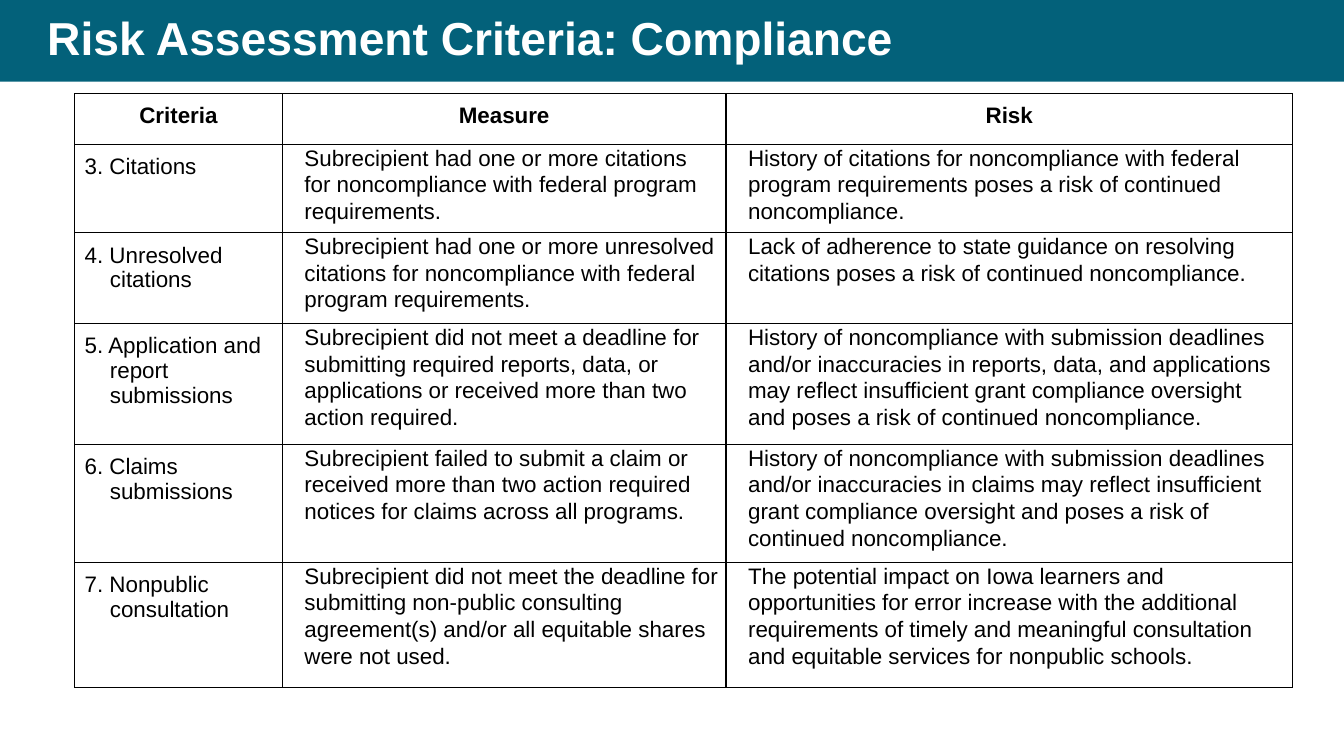
from dataclasses import dataclass

from lxml.etree import SubElement
from pptx import Presentation
from pptx.dml.color import RGBColor
from pptx.enum.shapes import MSO_SHAPE
from pptx.enum.text import MSO_ANCHOR, PP_ALIGN
from pptx.oxml.ns import qn
from pptx.util import Inches, Pt


@dataclass(frozen=True)
class Theme:
    font: str = "Arial"
    teal: str = "03617A"
    white: str = "FFFFFF"
    black: str = "000000"
    title: int = 33
    body: int = 16
    rule: int = 1


HEADS = ["Criteria", "Measure", "Risk"]
ROWS = [
    ("3. Citations",
     "Subrecipient had one or more citations for noncompliance with federal program "
     "requirements.",
     "History of citations for noncompliance with federal program requirements poses "
     "a risk of continued noncompliance."),
    ("4. Unresolved citations",
     "Subrecipient had one or more unresolved citations for noncompliance with "
     "federal program requirements.",
     "Lack of adherence to state guidance on resolving citations poses a risk of "
     "continued noncompliance."),
    ("5. Application and report submissions",
     "Subrecipient did not meet a deadline for submitting required reports, data, or "
     "applications or received more than two action required.",
     "History of noncompliance with submission deadlines and/or inaccuracies in "
     "reports, data, and applications may reflect insufficient grant compliance "
     "oversight and poses a risk of continued noncompliance."),
    ("6. Claims submissions",
     "Subrecipient failed to submit a claim or received more than two action "
     "required notices for claims across all programs.",
     "History of noncompliance with submission deadlines and/or inaccuracies in "
     "claims may reflect insufficient grant compliance oversight and poses a risk of "
     "continued noncompliance."),
    ("7. Nonpublic consultation",
     "Subrecipient did not meet the deadline for submitting non-public consulting "
     "agreement(s) and/or all equitable shares were not used.",
     "The potential impact on Iowa learners and opportunities for error increase "
     "with the additional requirements of timely and meaningful consultation and "
     "equitable services for nonpublic schools."),
]
WIDTHS = [2.06, 4.4, 5.62]
HEIGHTS = [0.5, 0.88, 0.9, 1.2, 1.17, 1.24]


class Painter:
    def __init__(self, slide, theme):
        self.slide = slide
        self.theme = theme

    def text(self, para, words, size, color, bold=False):
        run = para.add_run()
        run.text = words
        run.font.name = self.theme.font
        run.font.size = Pt(size)
        run.font.bold = bold
        run.font.color.rgb = RGBColor.from_string(color)

    def band(self, left, top, width, height):
        bar = self.slide.shapes.add_shape(
            MSO_SHAPE.RECTANGLE, *map(Inches, (left, top, width, height)))
        bar.shadow.inherit = False
        bar.fill.solid()
        bar.fill.fore_color.rgb = RGBColor.from_string(self.theme.teal)
        bar.line.fill.background()

    def title(self, words, left, top, width, height):
        box = self.slide.shapes.add_textbox(
            *map(Inches, (left, top, width, height)))
        frame = box.text_frame
        frame.word_wrap = True
        frame.vertical_anchor = MSO_ANCHOR.MIDDLE
        para = frame.paragraphs[0]
        para.line_spacing = 0.9
        self.text(para, words, self.theme.title, self.theme.white, True)

    def indent(self, para, left, first=0):
        """Set the left margin and the first-line offset, in inches."""
        props = para._p.get_or_add_pPr()
        props.set("marL", str(Inches(left)))
        props.set("indent", str(Inches(first)))

    def border(self, cell):
        props = cell._tc.get_or_add_tcPr()
        for side in ("lnL", "lnR", "lnT", "lnB"):
            line = SubElement(props, qn(f"a:{side}"), w=str(Pt(self.theme.rule)))
            fill = SubElement(line, qn("a:solidFill"))
            SubElement(fill, qn("a:srgbClr"), val=self.theme.black)

    def cell(self, cell, words, head, label):
        """Fill a cell; head and label cells have padding on all sides."""
        side, edge = (0.1, 0.1) if head or label else (0.07, 0)
        cell.margin_left = cell.margin_right = Inches(side)
        cell.margin_top = cell.margin_bottom = Inches(edge)
        self.border(cell)
        cell.fill.background()
        para = cell.text_frame.paragraphs[0]
        if head:
            para.alignment = PP_ALIGN.CENTER
        elif label:
            self.indent(para, 0.25, -0.25)
        else:
            self.indent(para, 0.15)
            para.line_spacing = 1.07
        self.text(para, words, self.theme.body, self.theme.black, head)

    def table(self, left, top, widths, heights, rows):
        size = (left, top, sum(widths), sum(heights))
        grid = self.slide.shapes.add_table(
            len(heights), len(widths), *map(Inches, size)).table
        grid.horz_banding = False
        for col, width in zip(grid.columns, widths):
            col.width = Inches(width)
        for row, height in zip(grid.rows, heights):
            row.height = Inches(height)
        for r, texts in enumerate(rows):
            for c, words in enumerate(texts):
                self.cell(grid.cell(r, c), words, r == 0, c == 0)


def main():
    deck = Presentation()
    deck.slide_width, deck.slide_height = Inches(13.33), Inches(7.5)
    slide = deck.slides.add_slide(deck.slide_layouts[6])
    paint = Painter(slide, Theme())
    paint.band(0, 0, 13.33, 0.81)
    paint.title("Risk Assessment Criteria: Compliance", 0.37, 0, 12.32, 0.81)
    paint.table(0.74, 0.93, WIDTHS, HEIGHTS, [HEADS, *ROWS])
    deck.save("out.pptx")


if __name__ == "__main__":
    main()
